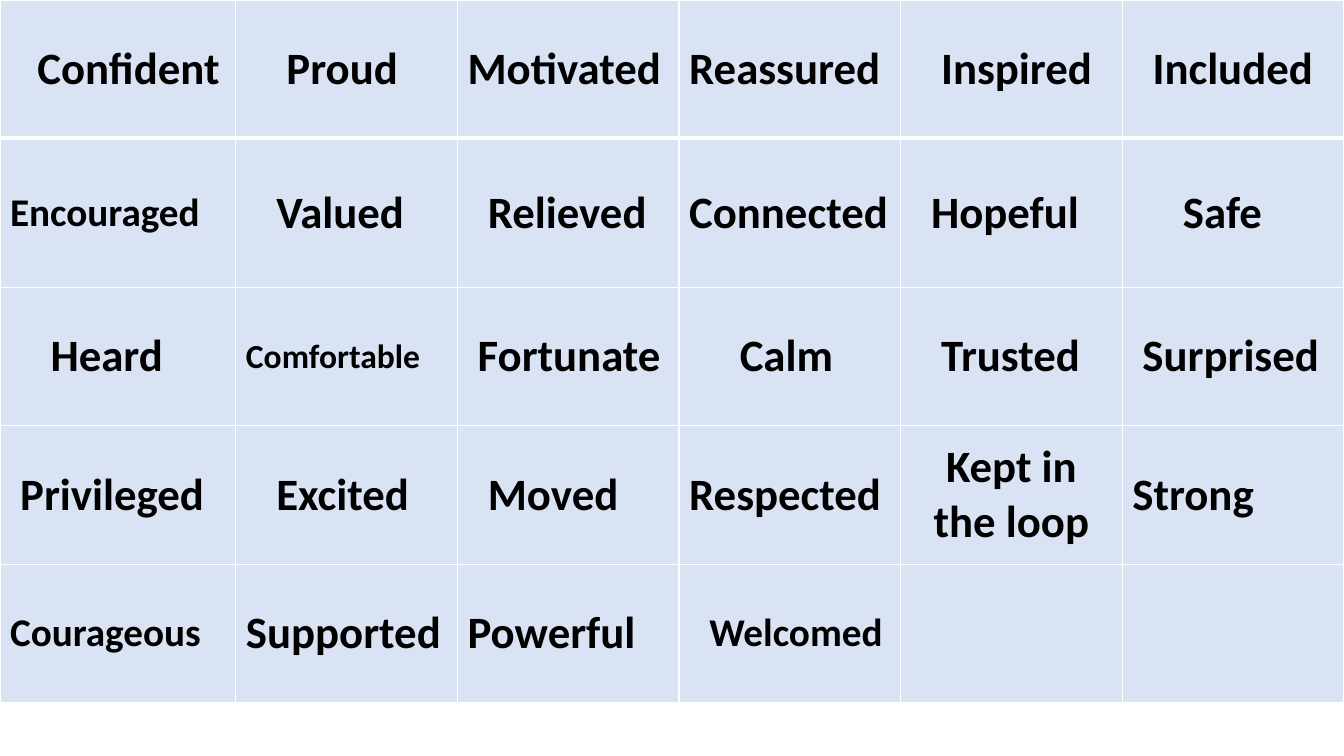
from dataclasses import dataclass

import lxml.etree
import pptx
import pptx.dml.color
import pptx.enum.text
import pptx.oxml.ns
import pptx.table
import pptx.util

Pt = pptx.util.Pt
PALE_BLUE = pptx.dml.color.RGBColor(0xDA, 0xE3, 0xF3)
WHITE = pptx.dml.color.RGBColor(0xFF, 0xFF, 0xFF)
BLACK = pptx.dml.color.RGBColor(0x00, 0x00, 0x00)
LEFT = pptx.enum.text.PP_ALIGN.LEFT
CENTER = pptx.enum.text.PP_ALIGN.CENTER

SIDE_MARGIN = 7.2
INDENT_STEP = 7.23
COLUMN_WIDTHS = [168.5] + [158.3] * 5
ROW_HEIGHTS = [98.8, 106.6, 98.8, 98.8, 98.8]


@dataclass(frozen=True)
class Feeling:
    word: str
    steps: float = 0
    size: float = 32
    align: pptx.enum.text.PP_ALIGN = LEFT


FEELINGS = [
    [Feeling("Confident", 2.1, align=CENTER), Feeling("Proud", 4), Feeling("Motivated"),
     Feeling("Reassured"), Feeling("Inspired", 3), Feeling("Included", 2)],
    [Feeling("Encouraged", size=28), Feeling("Valued", 3), Feeling("Relieved", 2),
     Feeling("Connected"), Feeling("Hopeful", 2), Feeling("Safe", 5)],
    [Feeling("Heard", 4), Feeling("Comfortable", size=24), Feeling("Fortunate", 1),
     Feeling("Calm", 5), Feeling("Trusted", 3), Feeling("Surprised", 1)],
    [Feeling("Privileged", 1), Feeling("Excited", 3), Feeling("Moved", 2),
     Feeling("Respected"), Feeling("Kept in the loop", align=CENTER), Feeling("Strong")],
    [Feeling("Courageous", size=28), Feeling("Supported"), Feeling("Powerful"),
     Feeling("Welcomed", 2, size=28)],
]


def add_border(cell: pptx.table._Cell, side: str, width: float) -> None:
    qn = pptx.oxml.ns.qn
    properties = cell._tc.get_or_add_tcPr()
    line = lxml.etree.SubElement(properties, qn(f"a:ln{side}"), w=str(Pt(width)))
    fill = lxml.etree.SubElement(line, qn("a:solidFill"))
    lxml.etree.SubElement(fill, qn("a:srgbClr"), val=str(WHITE))


def write_text(cell: pptx.table._Cell, text: str, *, size: float,
               align: pptx.enum.text.PP_ALIGN, indent: float) -> None:
    cell.margin_left = Pt(SIDE_MARGIN + indent)
    para = cell.text_frame.paragraphs[0]
    para.alignment = align
    span = para.add_run()
    span.text = text
    span.font.name = "Calibri"
    span.font.size = Pt(size)
    span.font.bold = True
    span.font.color.rgb = BLACK


def style_cell(cell: pptx.table._Cell, row: int) -> None:
    """Fill the cell and rule it, with a thick line under the first row."""
    widths = {"L": 1, "R": 1, "T": 3 if row == 1 else 1, "B": 3 if row == 0 else 1}
    for side, width in widths.items():
        add_border(cell, side, width)
    cell.fill.solid()
    cell.fill.fore_color.rgb = PALE_BLUE
    cell.vertical_anchor = pptx.enum.text.MSO_ANCHOR.MIDDLE


def add_feelings_table(page: pptx.slide.Slide) -> None:
    frame = page.shapes.add_table(
        len(ROW_HEIGHTS), len(COLUMN_WIDTHS), Pt(0), Pt(0),
        Pt(sum(COLUMN_WIDTHS)), Pt(sum(ROW_HEIGHTS)))
    table = frame.table
    table.first_row = False
    table.horz_banding = False
    for column, width in zip(table.columns, COLUMN_WIDTHS):
        column.width = Pt(width)
    for index, height in enumerate(ROW_HEIGHTS):
        table.rows[index].height = Pt(height)
        for cell in table.rows[index].cells:
            style_cell(cell, index)
        for cell, feeling in zip(table.rows[index].cells, FEELINGS[index]):
            write_text(cell, feeling.word, size=feeling.size, align=feeling.align,
                       indent=feeling.steps * INDENT_STEP)


def main() -> None:
    deck = pptx.Presentation()
    deck.slide_width, deck.slide_height = Pt(960), Pt(540)
    page = deck.slides.add_slide(deck.slide_layouts[6])
    add_feelings_table(page)
    deck.save("out.pptx")


if __name__ == "__main__":
    main()
